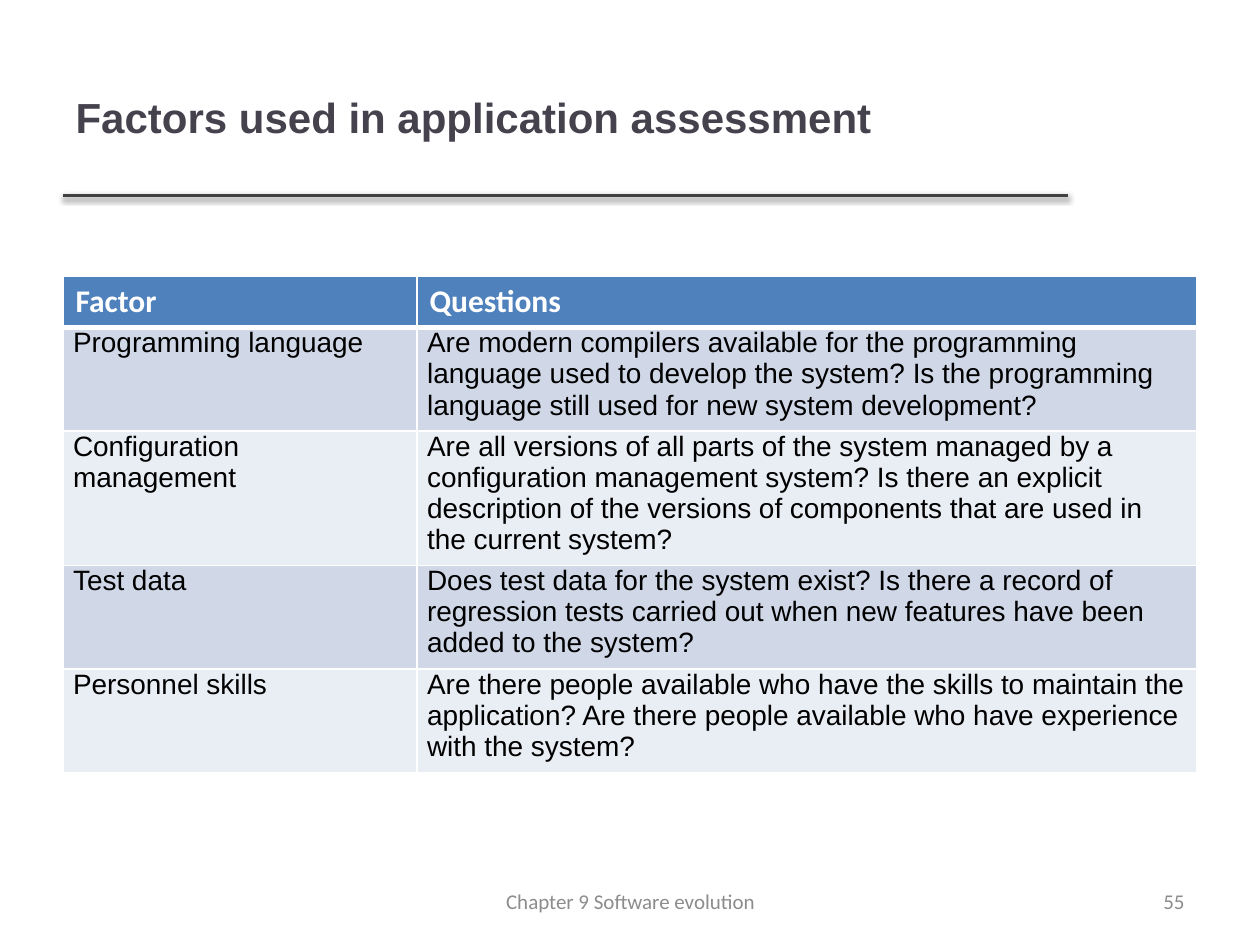
import pptx
import pptx.dml.color
import pptx.enum.shapes
import pptx.enum.text
import pptx.oxml
import pptx.oxml.ns
import pptx.util

Inches = pptx.util.Inches
Pt = pptx.util.Pt
ALIGN = pptx.enum.text.PP_ALIGN
MIDDLE = pptx.enum.text.MSO_ANCHOR.MIDDLE

COLORS = {
    "title": "46424D",
    "rule": "404040",
    "header": "4F81BD",
    "odd": "D0D8E8",
    "even": "E9EDF4",
    "white": "FFFFFF",
    "black": "000000",
    "footer": "8C8C8C",
}

FACTORS = [
    ("Factor", "Questions"),
    ("Programming language",
     "Are modern compilers available for the programming language used to develop "
     "the system? Is the programming language still used for new system development?"),
    ("Configuration management",
     "Are all versions of all parts of the system managed by a configuration "
     "management system? Is there an explicit description of the versions of "
     "components that are used in the current system?"),
    ("Test data",
     "Does test data for the system exist? Is there a record of regression tests "
     "carried out when new features have been added to the system?"),
    ("Personnel skills",
     "Are there people available who have the skills to maintain the application? "
     "Are there people available who have experience with the system?"),
]


def rgb(name):
    """Return the named palette colour."""
    return pptx.dml.color.RGBColor.from_string(COLORS[name])


def write(frame, text, size, font, color, bold=False, align=ALIGN.LEFT):
    """Write one formatted run into a text frame and return its paragraph."""
    frame.word_wrap = True
    paragraph = frame.paragraphs[0]
    paragraph.alignment = align
    run = paragraph.add_run()
    run.text = text
    run.font.size = Pt(size)
    run.font.name = font
    run.font.bold = bold
    run.font.color.rgb = rgb(color)
    return paragraph


def place_title(slide, left, top, width, height):
    """Place the title with a shadowed rule along the bottom of its box."""
    title = slide.shapes.title
    title.left, title.top = Inches(left), Inches(top)
    title.width, title.height = Inches(width), Inches(height)
    title.text_frame.vertical_anchor = MIDDLE
    write(title.text_frame, "Factors used in application assessment",
          24, "Arial", "title", bold=True)

    bottom = Inches(top + height)
    rule = slide.shapes.add_connector(
        pptx.enum.shapes.MSO_CONNECTOR.STRAIGHT,
        Inches(left), bottom, Inches(left + width), bottom)
    rule.line.color.rgb = rgb("rule")
    rule.line.width = Pt(2)
    rule._element.spPr.append(pptx.oxml.parse_xml(
        f'<a:effectLst {pptx.oxml.ns.nsdecls("a")}>'
        f'<a:outerShdw blurRad="{Pt(3.1)}" dist="{Pt(1.6)}" dir="5400000" rotWithShape="0">'
        f'<a:srgbClr val="{COLORS["black"]}"><a:alpha val="38000"/></a:srgbClr>'
        '</a:outerShdw></a:effectLst>'))


def border_cell(cell, bottom_width):
    """Give a cell white borders, with its own width at the bottom."""
    properties = cell._tc.get_or_add_tcPr()
    for side, width in (("L", 1), ("R", 1), ("T", 1), ("B", bottom_width)):
        properties.append(pptx.oxml.parse_xml(
            f'<a:ln{side} {pptx.oxml.ns.nsdecls("a")} w="{Pt(width)}">'
            f'<a:solidFill><a:srgbClr val="{COLORS["white"]}"/></a:solidFill>'
            f'</a:ln{side}>'))


def place_factors(slide, left, top, width, row_height):
    """Place the table of factors, whose rows grow with their text."""
    table = slide.shapes.add_table(
        len(FACTORS), 2, Inches(left), Inches(top),
        Inches(width), Inches(row_height * len(FACTORS))).table
    factor_width = 2.81
    table.columns[0].width = Inches(factor_width)
    table.columns[1].width = Inches(width - factor_width)
    for index, entries in enumerate(FACTORS):
        table.rows[index].height = Inches(row_height)
        for column, entry in enumerate(entries):
            cell = table.cell(index, column)
            header_above = index == 1
            border_cell(cell, 3 if index == 0 else 1)
            if header_above:
                top_border = cell._tc.tcPr.find(pptx.oxml.ns.qn("a:lnT"))
                top_border.set("w", str(Pt(3)))
            cell.fill.solid()
            if index == 0:
                cell.fill.fore_color.rgb = rgb("header")
                write(cell.text_frame, entry, 18, "Calibri", "white", bold=True)
            else:
                cell.fill.fore_color.rgb = rgb("odd" if index % 2 else "even")
                cell.margin_left = cell.margin_right = cell.margin_bottom = Inches(0.08)
                cell.margin_top = 0
                paragraph = write(cell.text_frame, entry, 16, "Arial", "black")
                paragraph.space_after = Pt(6)


def place_footer(slide, text, align, left, top, width, height):
    """Place one small grey footer text."""
    footer = slide.shapes.add_textbox(
        Inches(left), Inches(top), Inches(width), Inches(height)).text_frame
    footer.vertical_anchor = MIDDLE
    write(footer, text, 12, "Calibri", "footer", align=align)


def main():
    """Build the slide and save it."""
    presentation = pptx.Presentation()
    presentation.slide_width = Inches(10)
    presentation.slide_height = Inches(7.5)
    slide = presentation.slides.add_slide(presentation.slide_layouts[5])
    place_title(slide, 0.5, 0.3, 7.98, 1.25)
    place_factors(slide, 0.5, 2.19, 9, 0.41)
    place_footer(slide, "55", ALIGN.RIGHT, 7.17, 6.95, 2.33, 0.4)
    place_footer(slide, "Chapter 9 Software evolution", ALIGN.CENTER, 3.42, 6.95, 3.17, 0.4)
    presentation.save("out.pptx")


if __name__ == "__main__":
    main()
